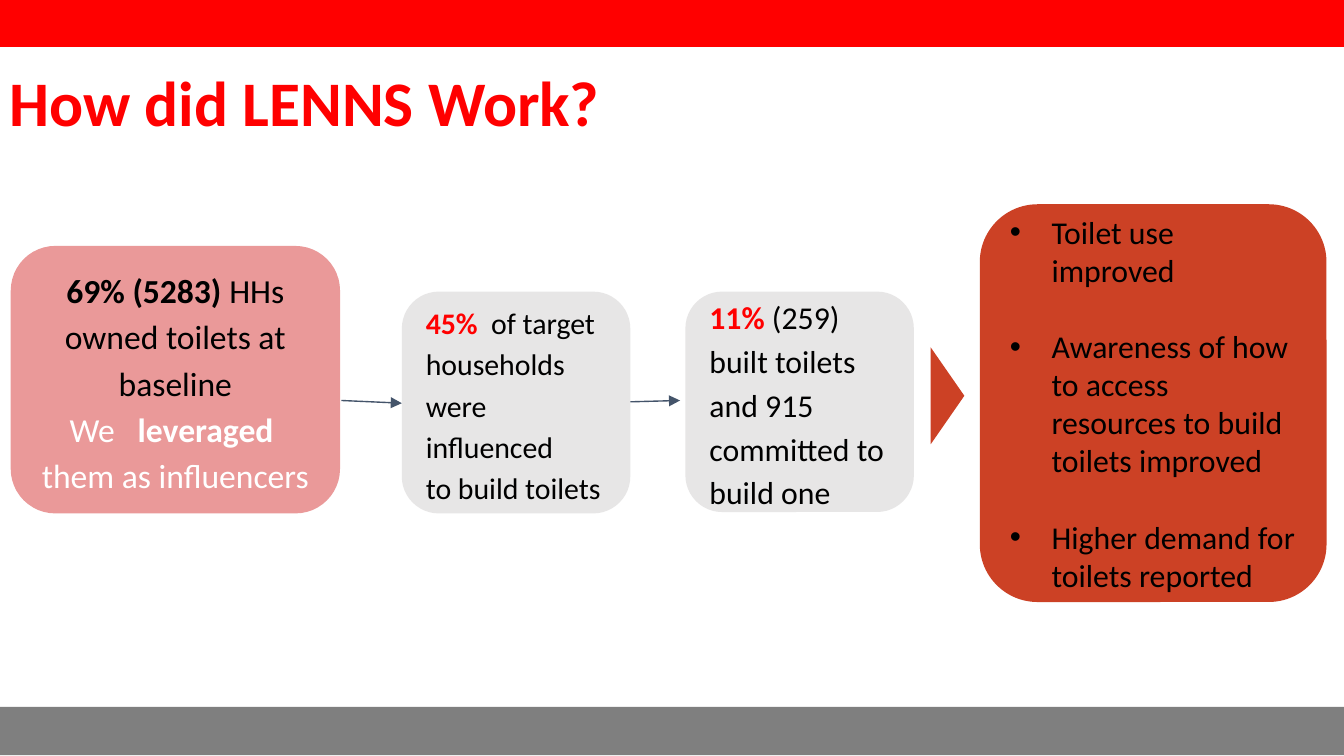
from dataclasses import dataclass

from lxml.etree import SubElement
from pptx import Presentation
from pptx.dml.color import RGBColor
from pptx.enum.shapes import MSO_CONNECTOR, MSO_SHAPE
from pptx.enum.text import MSO_ANCHOR, PP_ALIGN
from pptx.oxml.ns import qn
from pptx.util import Inches, Pt


@dataclass(frozen=True)
class Theme:
    font: str = "Calibri"
    red: str = "FF0000"
    gray: str = "7F7F7F"
    light_gray: str = "E7E6E6"
    pink: str = "EA9999"
    brick: str = "CC4125"
    slate: str = "44546A"
    black: str = "000000"
    white: str = "FFFFFF"
    title_size: int = 34
    large_size: int = 18
    medium_size: int = 17
    small_size: int = 16


THEME = Theme()


@dataclass(frozen=True)
class Run:
    text: str
    color: str = THEME.black
    bold: bool = False
    tracking: float = 0  # extra points after each character


@dataclass(frozen=True)
class Card:
    box: tuple[float, float, float, float]
    fill: str
    size: int
    paragraphs: list[list[Run]]
    inset: float = 0.05
    align: PP_ALIGN = PP_ALIGN.LEFT
    line_spacing: float = 1.15
    bullets: bool = False
    gap: float = 0


@dataclass(frozen=True)
class Arrow:
    start: tuple[float, float]
    end: tuple[float, float]


CARDS = [
    Card((2.99, 2.17, 1.7, 1.65), THEME.light_gray, THEME.small_size, [
        [Run("45%", THEME.red, True), Run(" ", tracking=3.6),
         Run("of target households were influenced")],
        [Run("to build toilets")],
    ], inset=0.1),
    Card((0.08, 1.83, 2.45, 1.99), THEME.pink, THEME.large_size, [
        [Run("69% (5283) ", bold=True), Run("HHs owned toilets at baseline")],
        [Run("We", THEME.white), Run(" ", THEME.white, tracking=8.1),
         Run("leveraged ", THEME.white, True)],
        [Run("them as influencers", THEME.white)],
    ], align=PP_ALIGN.CENTER),
    Card((7.29, 1.52, 2.58, 2.96), THEME.brick, THEME.medium_size, [
        [Run("Toilet use improved")],
        [Run("Awareness of how to access resources to build toilets improved")],
        [Run("Higher demand for toilets reported")],
    ], line_spacing=1.0, bullets=True, gap=20.5),
    Card((5.1, 2.17, 1.7, 1.64), THEME.light_gray, THEME.medium_size, [
        [Run("11% ", THEME.red, True),
         Run("(259) built toilets and 915 committed to build one")],
    ], inset=0.1),
]

ARROWS = [Arrow((4.69, 2.99), (5.06, 2.98)), Arrow((2.54, 2.98), (2.99, 3))]


def add_bullet(paragraph) -> None:
    properties = paragraph._p.get_or_add_pPr()
    properties.set("marL", str(Inches(0.31)))
    properties.set("indent", str(Inches(-0.31)))
    SubElement(properties, qn("a:buFont"), typeface="Arial")
    SubElement(properties, qn("a:buChar"), char="•")


def write_text(shape, paragraphs: list[list[Run]], *, size: int,
               inset: tuple[float, float], align: PP_ALIGN = PP_ALIGN.LEFT,
               anchor: MSO_ANCHOR = MSO_ANCHOR.MIDDLE, line_spacing: float = 1.0,
               bullets: bool = False, gap: float = 0) -> None:
    frame = shape.text_frame
    frame.word_wrap = True
    frame.vertical_anchor = anchor
    frame.margin_left = frame.margin_right = Inches(inset[0])
    frame.margin_top = frame.margin_bottom = Inches(inset[1])
    for index, runs in enumerate(paragraphs):
        paragraph = frame.add_paragraph() if index else frame.paragraphs[0]
        paragraph.alignment = align
        paragraph.line_spacing = line_spacing
        paragraph.space_before = Pt(gap if index else 0)
        if bullets:
            add_bullet(paragraph)
        for item in runs:
            run = paragraph.add_run()
            run.text = item.text
            run.font.name = THEME.font
            run.font.size = Pt(size)
            run.font.bold = item.bold
            run.font.color.rgb = RGBColor.from_string(item.color)
            if item.tracking:
                run._r.get_or_add_rPr().set("spc", str(round(item.tracking * 100)))


def add_block(slide, kind: MSO_SHAPE, box: tuple[float, float, float, float], fill: str):
    shape = slide.shapes.add_shape(kind, *map(Inches, box))
    shape.shadow.inherit = False
    shape.fill.solid()
    shape.fill.fore_color.rgb = RGBColor.from_string(fill)
    shape.line.fill.background()
    return shape


def add_card(slide, card: Card) -> None:
    shape = add_block(slide, MSO_SHAPE.ROUNDED_RECTANGLE, card.box, card.fill)
    write_text(shape, card.paragraphs, size=card.size, inset=(0.1, card.inset),
               align=card.align, line_spacing=card.line_spacing,
               bullets=card.bullets, gap=card.gap)


def add_arrow(slide, arrow: Arrow) -> None:
    connector = slide.shapes.add_connector(
        MSO_CONNECTOR.STRAIGHT, *map(Inches, arrow.start + arrow.end))
    connector.line.color.rgb = RGBColor.from_string(THEME.slate)
    connector.line.width = Pt(0.75)
    SubElement(connector.line._get_or_add_ln(), qn("a:tailEnd"), type="triangle")
    SubElement(connector._element.spPr, qn("a:effectLst"))


def main() -> None:
    presentation = Presentation()
    presentation.slide_width = Inches(10)
    presentation.slide_height = Inches(10) * 9 // 16
    slide = presentation.slides.add_slide(presentation.slide_layouts[6])

    # Bands at top and bottom
    add_block(slide, MSO_SHAPE.RECTANGLE, (-0.02, -0.01, 10.04, 0.36), THEME.red)
    add_block(slide, MSO_SHAPE.RECTANGLE, (-0.02, 5.26, 10.02, 0.36), THEME.gray)

    # Title
    title = slide.shapes.add_textbox(*map(Inches, (0, 0.43, 9.95, 0.76)))
    write_text(title, [[Run("How did LENNS Work?", THEME.red, True)]],
               size=THEME.title_size, inset=(0.07, 0.04), anchor=MSO_ANCHOR.TOP)

    # Steps and outcomes
    for card in CARDS:
        add_card(slide, card)

    # Links between the steps
    pointer = add_block(slide, MSO_SHAPE.ISOSCELES_TRIANGLE,
                        (6.69, 2.82, 0.72, 0.25), THEME.brick)
    pointer.rotation = 90
    for arrow in ARROWS:
        add_arrow(slide, arrow)

    presentation.save("out.pptx")


if __name__ == "__main__":
    main()
